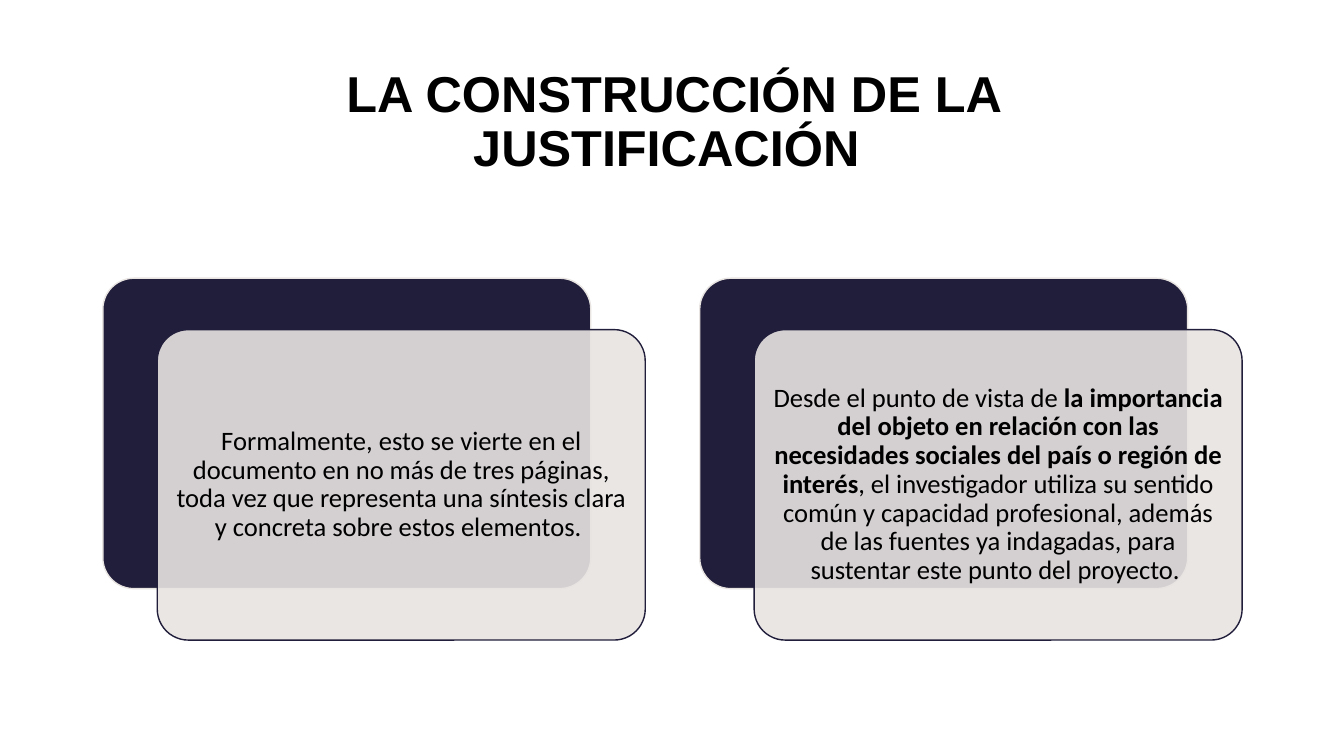
from dataclasses import dataclass

from lxml.etree import SubElement
from pptx import Presentation
from pptx.dml.color import RGBColor
from pptx.enum.shapes import MSO_SHAPE
from pptx.enum.text import MSO_ANCHOR, MSO_AUTO_SIZE, PP_ALIGN
from pptx.oxml.ns import qn
from pptx.util import Inches, Pt


@dataclass(frozen=True)
class Theme:
    navy: RGBColor = RGBColor.from_string("211E3B")
    stone: RGBColor = RGBColor.from_string("E8E4E2")
    ink: RGBColor = RGBColor.from_string("000000")
    title_font: str = "Arial"
    body_font: str = "Calibri"
    title_size: int = 36
    body_size: int = 19


theme = Theme()


def write_text(frame, runs, *, font, size, margin, space_after=0):
    """Fill a frame with one centred paragraph of (text, bold) runs."""
    frame.word_wrap = True
    frame.auto_size = MSO_AUTO_SIZE.NONE
    frame.vertical_anchor = MSO_ANCHOR.MIDDLE
    frame.margin_left = frame.margin_right = Inches(margin)
    frame.margin_top = frame.margin_bottom = Inches(min(margin, 0.08))
    paragraph = frame.paragraphs[0]
    paragraph.alignment = PP_ALIGN.CENTER
    paragraph.line_spacing = 0.9
    paragraph.space_after = Pt(space_after)
    for text, bold in runs:
        run = paragraph.add_run()
        run.text = text
        run.font.name = font
        run.font.size = Pt(size)
        run.font.bold = bold
        run.font.color.rgb = theme.ink


def add_panel(left, top, fill, line):
    panel = slide.shapes.add_shape(
        MSO_SHAPE.ROUNDED_RECTANGLE,
        Inches(left), Inches(top), Inches(4.84), Inches(3.08),
    )
    panel.adjustments[0] = 0.1
    panel.shadow.inherit = False
    panel.fill.solid()
    panel.fill.fore_color.rgb = fill
    panel.line.color.rgb = line
    panel.line.width = Pt(1)
    return panel


presentation = Presentation()
presentation.slide_width = Inches(13.33)
presentation.slide_height = Inches(7.5)
slide = presentation.slides.add_slide(presentation.slide_layouts[5])

# Title
heading = slide.shapes.title
heading.left, heading.top = Inches(1.67), Inches(0.6)
heading.width, heading.height = Inches(10.02), Inches(1.24)
write_text(
    heading.text_frame,
    [("LA CONSTRUCCIÓN DE LA JUSTIFICACIÓN ", True)],
    font=theme.title_font, size=theme.title_size, margin=0.1,
)

# Cards: a navy panel behind a translucent one that holds the text
formal_note = [
    ("Formalmente, esto se vierte en el documento en no más de tres páginas, "
     "toda vez que representa una síntesis clara y concreta sobre estos "
     "elementos. ", False),
]
social_relevance = [
    ("Desde el punto de vista de ", False),
    ("la importancia del objeto en relación con las necesidades sociales "
     "del país o región de interés", True),
    (", el investigador utiliza su sentido común y capacidad profesional, "
     "además de las fuentes ya indagadas, para sustentar este punto del "
     "proyecto. ", False),
]
for column, statement in enumerate([formal_note, social_relevance]):
    left = 1.02 + column * 5.92
    add_panel(left, 2.76, theme.navy, theme.stone)
    card = add_panel(left + 0.54, 3.27, theme.stone, theme.navy)
    color = card.fill._xPr.find(qn("a:solidFill"))[0]
    SubElement(color, qn("a:alpha"), val="90000")
    write_text(
        card.text_frame, statement,
        font=theme.body_font, size=theme.body_size, margin=0.08,
        space_after=6.65,
    )

presentation.save("out.pptx")
